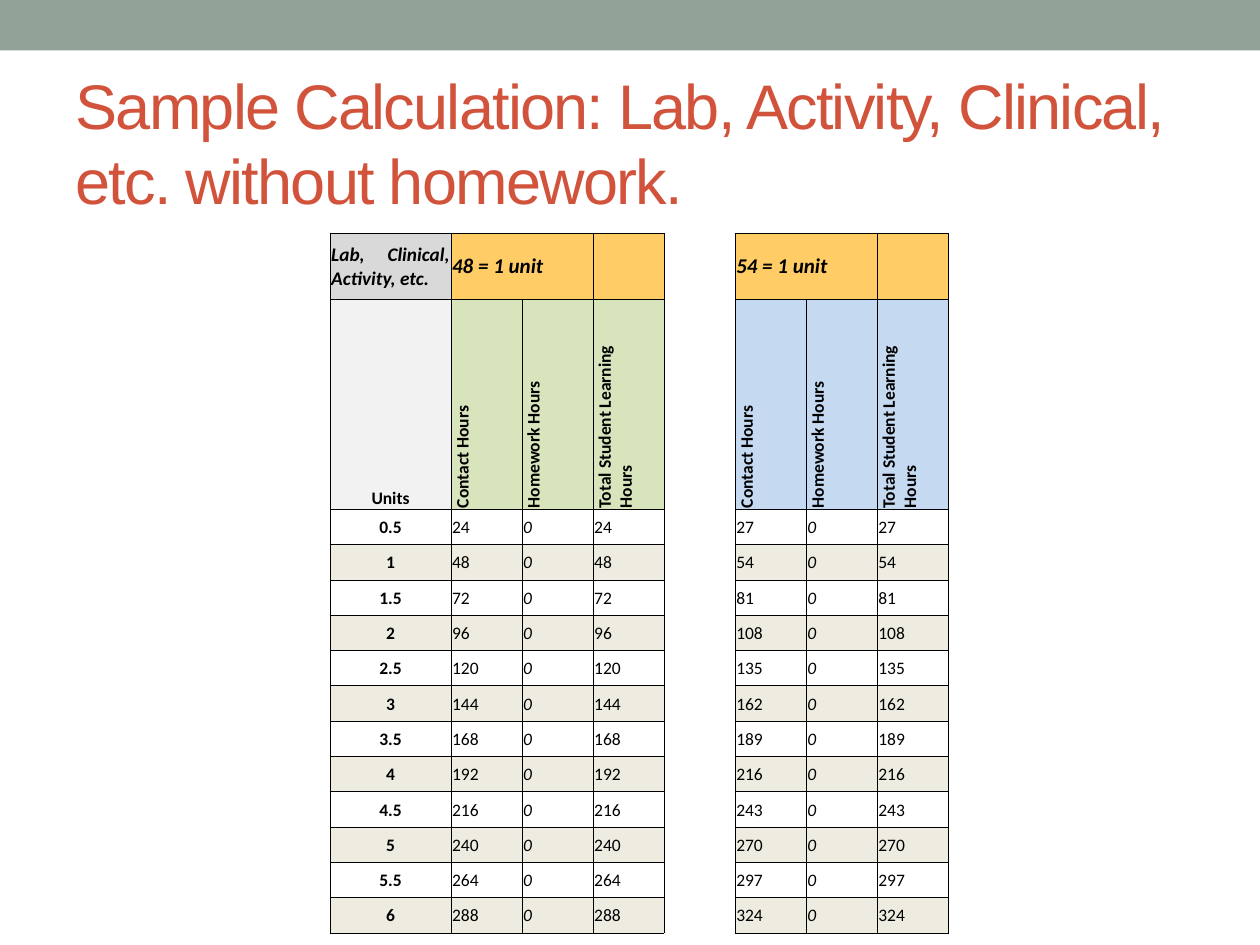
import pptx
import pptx.util
import pptx.dml.color
import pptx.enum.shapes
import pptx.enum.text
from lxml import etree

Pt = pptx.util.Pt
ALIGN = pptx.enum.text.PP_ALIGN
ANCHOR = pptx.enum.text.MSO_ANCHOR
A = "{http://schemas.openxmlformats.org/drawingml/2006/main}"

# Content
TITLE = "Sample Calculation: Lab, Activity, Clinical, etc. without homework."
CORNER = "Lab, Clinical, Activity, etc."
UNITS = [n / 2 for n in range(1, 13)]
HOURS = ["Contact Hours", "Homework Hours", "Total Student Learning Hours"]
# First column of each block, hours per unit, header colour
BLOCKS = [(1, 48, "D8E4BC"), (5, 54, "C5D9F1")]

# Layout
COLS = [69.1] + [40.6] * 7
ROWS = [37.7, 107.3] + [20.2] * len(UNITS)
GAP = 4
ORANGE, GREY, PALE, BAND = "FFCC66", "D9D9D9", "F2F2F2", "EEECE1"


def rgb(value):
    return pptx.dml.color.RGBColor.from_string(value)


def set_borders(cell, sides):
    """Thin black lines on the named sides, none on the others."""
    tc_pr = cell._tc.get_or_add_tcPr()
    for i, side in enumerate("LRTB"):
        ln = etree.Element(A + "ln" + side, w=str(Pt(0.5)))
        if side in sides:
            fill = etree.SubElement(ln, A + "solidFill")
            etree.SubElement(fill, A + "srgbClr", val="000000")
        else:
            etree.SubElement(ln, A + "noFill")
        tc_pr.insert(i, ln)


def fill_cell(cell, text="", fill=None, size=10, bold=False, italic=False,
              align=ALIGN.JUSTIFY, anchor=ANCHOR.MIDDLE, sides="LRTB"):
    cell.margin_left = cell.margin_right = cell.margin_top = Pt(0.7)
    cell.margin_bottom = 0
    cell.vertical_anchor = anchor
    if fill:
        cell.fill.solid()
        cell.fill.fore_color.rgb = rgb(fill)
    else:
        cell.fill.background()
    set_borders(cell, sides)
    p = cell.text_frame.paragraphs[0]
    p.alignment = align
    if text:
        p.text = text
        p.font.name, p.font.size = "Calibri", Pt(size)
        p.font.bold, p.font.italic = bold, italic
        p.font.color.rgb = rgb("000000")
    else:
        # Keeps an empty cell from stretching its row
        etree.SubElement(p._p, A + "endParaRPr", sz=str(size * 100))


prs = pptx.Presentation()
prs.slide_width, prs.slide_height = Pt(720), Pt(540)
s = prs.slides.add_slide(prs.slide_layouts[5])

# Top band
band = s.shapes.add_shape(pptx.enum.shapes.MSO_SHAPE.RECTANGLE,
                          0, 0, Pt(720), Pt(28.8))
band.shadow.inherit = False
band.fill.solid()
band.fill.fore_color.rgb = rgb("93A299")
band.line.fill.background()

# Title
title = s.shapes.title
title.left, title.top, title.width, title.height = map(Pt, (36, 42, 648, 78))
tf = title.text_frame
tf.text = TITLE
tf.word_wrap = True
tf.auto_size = pptx.enum.text.MSO_AUTO_SIZE.NONE
tf.vertical_anchor = ANCHOR.MIDDLE
p = tf.paragraphs[0]
p.alignment = ALIGN.LEFT
p.font.name, p.font.size = "Arial", Pt(36)
p.font.color.rgb = rgb("D2533C")
p.runs[0]._r.get_or_add_rPr().set("spc", "-100")

# Table grid
table = s.shapes.add_table(len(ROWS), len(COLS), Pt(188.6), Pt(133.2),
                           Pt(sum(COLS)), Pt(sum(ROWS))).table
table.first_row = table.horz_banding = False
for column, width in zip(table.columns, COLS):
    column.width = Pt(width)
for row, height in zip(table.rows, ROWS):
    row.height = Pt(height)

# Units column and the open gap between the blocks
fill_cell(table.cell(0, 0), CORNER, GREY, 11, bold=True, italic=True)
fill_cell(table.cell(1, 0), "Units", PALE, bold=True,
          align=ALIGN.CENTER, anchor=ANCHOR.BOTTOM)
for i, units in enumerate(UNITS):
    fill_cell(table.cell(i + 2, 0), f"{units:g}", BAND if i % 2 else None,
              bold=True, align=ALIGN.CENTER)
for i in range(len(ROWS)):
    fill_cell(table.cell(i, GAP), sides="LR")

# Blocks of hours
for first, per_unit, colour in BLOCKS:
    fill_cell(table.cell(0, first), f"{per_unit} = 1 unit", ORANGE, 12,
              bold=True, italic=True)
    for col in (first + 1, first + 2):
        fill_cell(table.cell(0, col), fill=ORANGE)
    table.cell(0, first).merge(table.cell(0, first + 1))
    for j, label in enumerate(HOURS):
        cell = table.cell(1, first + j)
        fill_cell(cell, label, colour, bold=True, align=ALIGN.LEFT)
        cell._tc.get_or_add_tcPr().set("vert", "vert270")
    for i, units in enumerate(UNITS):
        contact = f"{units * per_unit:g}"
        for j, hours in enumerate((contact, "0", contact)):
            fill_cell(table.cell(i + 2, first + j), hours,
                      BAND if i % 2 else None, italic=j == 1)

prs.save("out.pptx")
